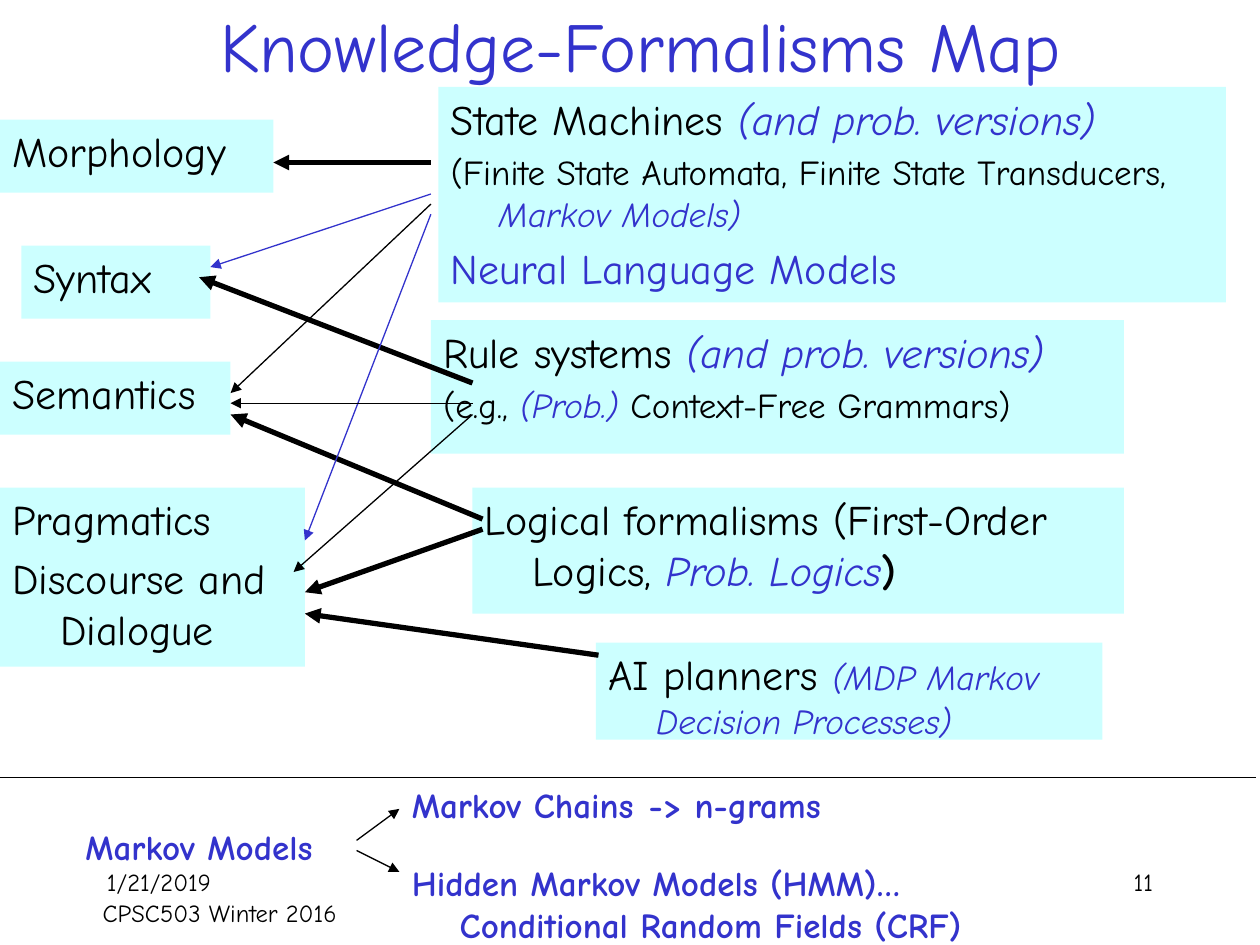
"""Build the Knowledge-Formalisms Map slide."""
from lxml.etree import SubElement
from pptx import Presentation
from pptx.dml.color import RGBColor
from pptx.enum.shapes import MSO_CONNECTOR as Connector, MSO_SHAPE as Shape
from pptx.enum.text import MSO_ANCHOR as Anchor, PP_ALIGN as Align
from pptx.oxml.ns import qn
from pptx.util import Inches, Pt

BLACK = RGBColor(0x00, 0x00, 0x00)
BLUE = RGBColor(0x33, 0x33, 0xCC)
PALE_CYAN = RGBColor(0xCC, 0xFF, 0xFF)

PLAIN = {"size": Pt(24), "bold": False, "italic": False, "color": BLACK}
PROB = PLAIN | {"italic": True, "color": BLUE}
NEURAL = PLAIN | {"color": BLUE}
CLOSING = PLAIN | {"bold": True}
DETAIL = PLAIN | {"size": Pt(20)}
PROB_DETAIL = PROB | {"size": Pt(20)}
MARKOV = NEURAL | {"size": Pt(20), "bold": True}
FOOTER = PLAIN | {"size": Pt(14)}
TITLE = NEURAL | {"size": Pt(40)}


class MapSlide:
    font_name = "Comic Neue"
    hanging = 0.38

    def __init__(self, deck):
        self.slide = deck.slides.add_slide(deck.slide_layouts[6])

    def fill_text(self, frame, paragraphs, align=Align.LEFT, hanging=True,
                  anchor=Anchor.TOP, tab=None):
        frame.word_wrap = True
        frame.vertical_anchor = anchor
        for index, runs in enumerate(paragraphs):
            paragraph = frame.paragraphs[0] if index == 0 else frame.add_paragraph()
            paragraph.alignment = align
            properties = paragraph._p.get_or_add_pPr()
            if hanging:
                paragraph.space_before = Pt(0.2 * runs[0][1]["size"].pt)
                properties.set("marL", str(Inches(self.hanging)))
                properties.set("indent", str(-Inches(self.hanging)))
            if tab:
                stops = SubElement(properties, qn("a:tabLst"))
                SubElement(stops, qn("a:tab"), pos=str(Inches(tab)), algn="l")
            for text, style in runs:
                run = paragraph.add_run()
                run.text = text
                run.font.name = self.font_name
                for attribute, value in style.items():
                    if attribute == "color":
                        run.font.color.rgb = value
                    else:
                        setattr(run.font, attribute, value)

    def topic(self, place, *paragraphs):
        panel = self.slide.shapes.add_shape(Shape.RECTANGLE, *map(Inches, place))
        panel.shadow.inherit = False
        panel.fill.solid()
        panel.fill.fore_color.rgb = PALE_CYAN
        panel.line.fill.background()
        self.fill_text(panel.text_frame, paragraphs)

    def label(self, place, text, style, **layout):
        caption = self.slide.shapes.add_textbox(*map(Inches, place))
        self.fill_text(caption.text_frame, [[(text, style)]], **layout)

    def link(self, start, end, width=0.75, color=BLACK, arrow=True):
        connector = self.slide.shapes.add_connector(
            Connector.STRAIGHT, *map(Inches, (*start, *end)))
        connector.line.width = Pt(width)
        connector.line.color.rgb = color
        properties = connector._element.spPr
        if arrow:
            SubElement(properties.get_or_add_ln(), qn("a:tailEnd"), type="triangle")
        SubElement(properties, qn("a:effectLst"))


def main():
    deck = Presentation()
    deck.slide_width, deck.slide_height = Inches(10), Inches(7.5)
    page = MapSlide(deck)

    page.label((1, 0.02, 8.17, 0.67), "Knowledge-Formalisms Map", TITLE,
               align=Align.CENTER, hanging=False, anchor=Anchor.MIDDLE)

    page.topic((3.75, 3.87, 5.17, 1),
               [("Logical formalisms (First-Order Logics, ", PLAIN),
                ("Prob. Logics", PROB), (")", CLOSING)])
    page.topic((3.42, 2.54, 5.5, 1.06),
               [("Rule systems ", PLAIN), ("(and prob. versions)", PROB)],
               [("(e.g., ", DETAIL), ("(Prob.)", PROB_DETAIL),
                (" Context-Free Grammars)", DETAIL)])
    page.topic((3.48, 0.69, 6.25, 1.71),
               [("State Machines ", PLAIN), ("(and prob. versions)", PROB)],
               [("(Finite State Automata, Finite State Transducers, ", DETAIL),
                ("Markov Models)", PROB_DETAIL)],
               [("Neural Language Models", NEURAL)])
    page.topic((4.73, 5.1, 4.02, 0.77),
               [("AI planners ", PLAIN), ("(MDP Markov Decision Processes)", PROB_DETAIL)])

    for place, levels in (
        ((0, 0.95, 2.17, 0.58), ["Morphology"]),
        ((0.17, 1.95, 1.5, 0.58), ["Syntax"]),
        ((0, 2.87, 1.83, 0.58), ["Semantics"]),
        ((0, 3.87, 2.42, 1.42), ["Pragmatics", "Discourse and Dialogue"]),
    ):
        page.topic(place, *([(level, PLAIN)] for level in levels))

    for start, end in (
        ((3.42, 1.29), (2.17, 1.29)),
        ((3.75, 3.04), (1.58, 2.2)),
        ((3.83, 4.12), (1.83, 3.29)),
        ((3.83, 4.2), (2.42, 4.7)),
        ((4.75, 5.2), (2.42, 4.87)),
    ):
        page.link(start, end, width=3)
    for start, end, color in (
        ((3.42, 1.62), (1.83, 3.12), BLACK),
        ((3.42, 1.7), (2.42, 4.29), BLUE),
        ((3.42, 1.54), (1.67, 2.12), BLUE),
        ((3.75, 3.2), (1.83, 3.2), BLACK),
        ((3.75, 3.29), (2.33, 4.54), BLACK),
        ((2.83, 6.67), (3.17, 6.42), BLACK),
        ((2.83, 6.75), (3.17, 6.92), BLACK),
    ):
        page.link(start, end, color=color)
    page.link((-0.03, 6.17), (9.97, 6.17), arrow=False)

    page.label((0.58, 6.5, 2.33, 0.58), "Markov Models", MARKOV)
    page.label((3.17, 6.17, 4.75, 0.58), "Markov Chains\t-> n-grams", MARKOV, tab=2.06)
    page.label((3.17, 6.79, 5.08, 0.58),
               "Hidden Markov Models (HMM)… Conditional Random Fields (CRF)", MARKOV)

    for place, text, align in (
        ((0.75, 6.83, 2.08, 0.5), "1/21/2019", Align.LEFT),
        ((0.16, 7.08, 3.17, 0.5), "CPSC503 Winter 2016", Align.CENTER),
        ((7.17, 6.83, 2.08, 0.5), "11", Align.RIGHT),
    ):
        page.label(place, text, FOOTER, align=align, hanging=False)

    deck.save("out.pptx")


if __name__ == "__main__":
    main()
